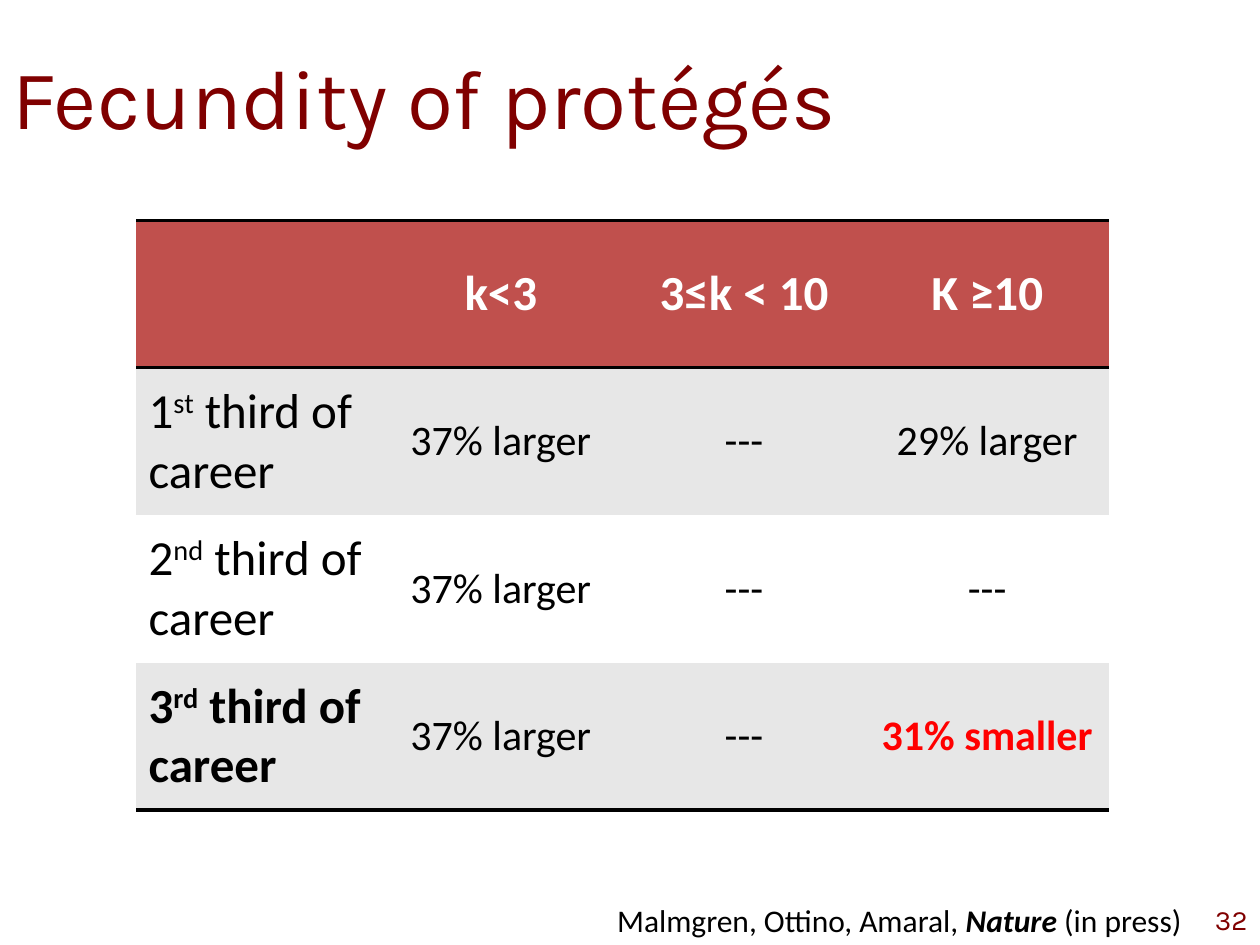
"""Build the slide on the fecundity of protégés."""
from typing import NamedTuple

from lxml.etree import SubElement
from pptx import Presentation
from pptx.dml.color import RGBColor
from pptx.enum.text import MSO_ANCHOR, PP_ALIGN
from pptx.oxml import parse_xml
from pptx.oxml.ns import nsdecls, qn
from pptx.util import Pt

SCALE = 9144
PLAIN = "{2D5ABB26-0587-4C30-8999-92F81FD0307C}"
COLORS = {
    "maroon": "800000", "head": "C0504D", "band": "E7E7E7",
    "white": "FFFFFF", "black": "000000", "red": "FF0000",
}


class Run(NamedTuple):
    text: str
    size: int
    color: str = "black"
    font: str = "Calibri"
    bold: bool = False
    slant: bool = False
    raised: bool = False


class Box(NamedTuple):
    left: int
    top: int
    width: int
    height: int
    runs: list[Run]
    align: PP_ALIGN = PP_ALIGN.LEFT
    anchor: MSO_ANCHOR = MSO_ANCHOR.MIDDLE
    wrap: bool = True


class Row(NamedTuple):
    cells: list[list[Run]]
    fill: str
    edges: str = ""


def px(count: int) -> int:
    return count * SCALE


def rgb(name: str) -> RGBColor:
    return RGBColor.from_string(COLORS[name])


def write(frame, runs: list[Run], align: PP_ALIGN) -> None:
    para = frame.paragraphs[0]
    para.alignment = align
    for item in runs:
        run = para.add_run()
        run.text = item.text
        font = run.font
        font.name, font.size = item.font, Pt(item.size)
        font.bold, font.italic = item.bold, item.slant
        font.color.rgb = rgb(item.color)
        if item.raised:
            run._r.get_or_add_rPr().set("baseline", "30000")


def add_box(slide, box: Box) -> None:
    shape = slide.shapes.add_textbox(*map(px, box[:4]))
    frame = shape.text_frame
    frame.word_wrap = box.wrap
    frame.vertical_anchor = box.anchor
    write(frame, box.runs, box.align)


def add_edge(cell, side: str) -> None:
    line = parse_xml(f'<a:ln{side} {nsdecls("a")} w="{Pt(2)}"/>')
    fill = SubElement(line, qn("a:solidFill"))
    SubElement(fill, qn("a:srgbClr"), val=COLORS["black"])
    cell._tc.get_or_add_tcPr().insert(0, line)


def add_grid(slide, rows: list[Row], left: int, top: int, wide: int, high: int) -> None:
    count = len(rows[0].cells)
    frame = slide.shapes.add_table(
        len(rows), count, px(left), px(top), px(wide * count), px(high * len(rows)))
    table = frame.table
    table.first_row = table.horz_banding = False
    table._tbl.tblPr.find(qn("a:tableStyleId")).text = PLAIN
    for y, row in enumerate(rows):
        for x, runs in enumerate(row.cells):
            cell = table.cell(y, x)
            cell.vertical_anchor = MSO_ANCHOR.MIDDLE
            cell.fill.solid()
            cell.fill.fore_color.rgb = rgb(row.fill)
            write(cell.text_frame, runs, PP_ALIGN.CENTER if x else PP_ALIGN.LEFT)
            for side in row.edges:
                add_edge(cell, side)


def label(digit: str, mark: str, bold: bool = False) -> list[Run]:
    return [
        Run(digit, 28, bold=bold),
        Run(mark, 28, bold=bold, raised=True),
        Run(" third of career", 28, bold=bold),
    ]


def main() -> None:
    deck = Presentation()
    deck.slide_width, deck.slide_height = px(1000), px(750)
    slide = deck.slides.add_slide(deck.slide_layouts[6])

    heads = [[Run(text, 28, "white", bold=True)] for text in ("k<3", "3≤k < 10", "K ≥10")]
    more, none = [Run("37% larger", 24)], [Run("---", 24)]
    less = [Run("31% smaller", 24, "red", bold=True)]
    rows = [
        Row([[], *heads], "head", "BT"),
        Row([label("1", "st"), more, none, [Run("29% larger", 24)]], "band"),
        Row([label("2", "nd"), more, none, none], "white"),
        Row([label("3", "rd", True), more, none, less], "band", "B"),
    ]
    source = [
        Run("Malmgren, Ottino, Amaral, ", 18),
        Run("Nature", 18, bold=True, slant=True),
        Run(" (in press)", 18),
    ]

    add_box(slide, Box(0, 0, 950, 153, [Run("Fecundity of protégés", 48, "maroon", "Karla")]))
    add_grid(slide, rows, 108, 175, 193, 117)
    add_box(slide, Box(480, 710, 470, 40, source, anchor=MSO_ANCHOR.TOP, wrap=False))
    add_box(slide, Box(767, 710, 233, 40, [Run("32", 16, "maroon", "Karla")], PP_ALIGN.RIGHT))
    deck.save("out.pptx")


if __name__ == "__main__":
    main()
